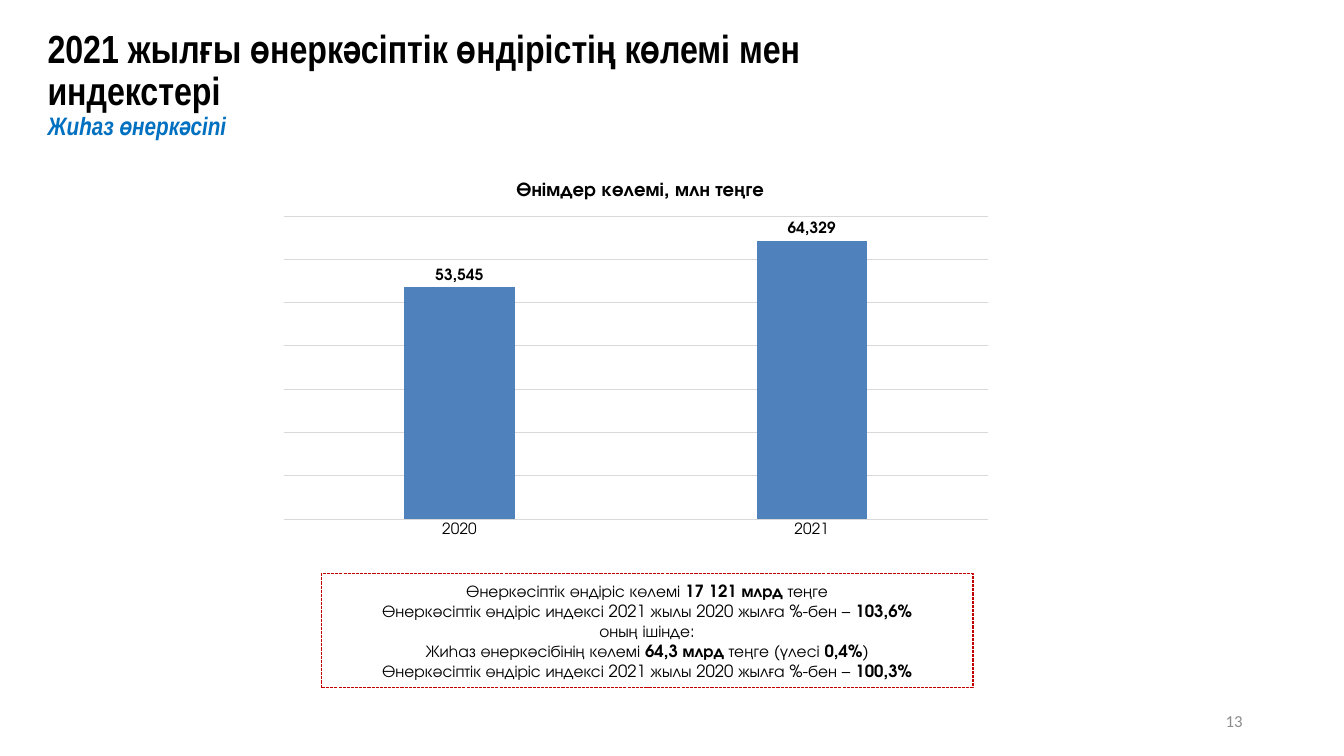
from lxml import etree
from pptx import Presentation, util as u
from pptx.chart.data import CategoryChartData
from pptx.dml.color import RGBColor
from pptx.enum import chart as ch, dml, shapes, text
from pptx.oxml.ns import qn

W, H = 13.33, 7.5
SANS, NARROW, NUMBER = "TeX Gyre Adventor", "Arial Narrow", "Calibri"
BLACK, BLUE, RED, BAR, GRID, GREY = "000000", "0070C0", "C00000", "4F81BD", "D9D9D9", "8C8C8C"

TITLE = "2021 жылғы өнеркәсіптік өндірістің көлемі мен индекстері"
SUBTITLE = "Жиһаз өнеркәсіпі"
CHART_TITLE = "Өнімдер көлемі, млн теңге"
VOLUMES = {"2020": 53545, "2021": 64329}
PAGE = "13"
# Odd pieces between bars are bold
INDEX_LINE = "Өнеркәсіптік өндіріс индексі 2021 жылы 2020 жылға %-бен – "
SUMMARY = [
    "Өнеркәсіптік өндіріс көлемі |17 121 млрд |теңге",
    INDEX_LINE + "|103,6%",
    "оның ішінде:",
    "Жиһаз өнеркәсібінің көлемі |64,3 млрд |теңге (үлесі |0,4%|)",
    INDEX_LINE + "|100,3%",
]

# Left, top, width, height as shares of the slide
PLACES = {
    "title": (0.028, 0.047, 0.636, 0.132),
    "chart_title": (0.294, 0.227, 0.365, 0.045),
    "chart": (0.2, 0.277, 0.546, 0.443),
    "summary": (0.239, 0.759, 0.485, 0.151),
    "page": (0.707, 0.927, 0.225, 0.053),
}
PLOT = {"x": 0.02, "y": 0.02, "w": 0.96, "h": 0.905}


def rgb(value):
    return RGBColor.from_string(value)


def place(name):
    x, y, w, h = PLACES[name]
    return [u.Inches(v) for v in (x * W, y * H, w * W, h * H)]


def style(font, name, size, color=BLACK, **flags):
    for key, value in {"name": name, "size": u.Pt(size), **flags}.items():
        setattr(font, key, value)
    font.color.rgb = rgb(color)


def add_run(p, words, *look, **flags):
    r = p.add_run()
    r.text = words
    style(r.font, *look, **flags)


def text_box(s, name, align, anchor=text.MSO_ANCHOR.MIDDLE):
    tf = s.shapes.add_textbox(*place(name)).text_frame
    tf.word_wrap, tf.vertical_anchor = True, anchor
    tf.paragraphs[0].alignment = align
    return tf.paragraphs[0]


def grid_line(line):
    line.color.rgb, line.width = rgb(GRID), u.Pt(0.75)


def fix_plot_area(chart):
    """Pin the inner plot area to the shares in PLOT."""
    area = chart._chartSpace.chart.plotArea
    for old in area.findall(qn("c:layout")):
        area.remove(old)
    layout = etree.Element(qn("c:layout"))
    area.insert(0, layout)
    manual = etree.SubElement(layout, qn("c:manualLayout"))
    settings = {"layoutTarget": "inner", "xMode": "edge", "yMode": "edge", **PLOT}
    for tag, value in settings.items():
        etree.SubElement(manual, qn("c:" + tag)).set("val", str(value))


def add_volume_chart(s):
    data = CategoryChartData(number_format="#,##0")
    data.categories = list(VOLUMES)
    data.add_series("Series 1", list(VOLUMES.values()))
    kind = ch.XL_CHART_TYPE.COLUMN_CLUSTERED
    chart = s.shapes.add_chart(kind, *place("chart"), data).chart
    chart.has_legend = chart.has_title = False
    style(chart.font, SANS, 11)
    fix_plot_area(chart)

    years, values = chart.category_axis, chart.value_axis
    years.major_tick_mark = ch.XL_TICK_MARK.NONE
    style(years.tick_labels.font, SANS, 11)
    grid_line(years.format.line)
    values.minimum_scale, values.maximum_scale, values.major_unit = 0, 70000, 10000
    values.visible, values.has_major_gridlines = False, True
    grid_line(values.major_gridlines.format.line)

    plot = chart.plots[0]
    plot.gap_width, plot.overlap, plot.vary_by_categories = 219, -27, False
    fill = plot.series[0].format.fill
    fill.solid()
    fill.fore_color.rgb = rgb(BAR)
    labels = plot.series[0].data_labels
    labels.show_value, labels.number_format = True, "#,##0"
    labels.number_format_is_linked = False
    labels.position = ch.XL_LABEL_POSITION.OUTSIDE_END
    style(labels.font, SANS, 11, bold=True)


def add_summary(s):
    sp = s.shapes.add_shape(shapes.MSO_SHAPE.RECTANGLE, *place("summary"))
    sp.shadow.inherit = False
    sp.fill.background()
    sp.line.color.rgb, sp.line.width = rgb(RED), u.Pt(0.75)
    sp.line.dash_style = dml.MSO_LINE.SQUARE_DOT
    tf = sp.text_frame
    tf.word_wrap, tf.vertical_anchor = True, text.MSO_ANCHOR.MIDDLE
    for i, line in enumerate(SUMMARY):
        p = tf.add_paragraph() if i else tf.paragraphs[0]
        p.alignment = text.PP_ALIGN.CENTER
        for j, words in enumerate(line.split("|")):
            add_run(p, words, SANS, 12, bold=j % 2 == 1)


def main():
    prs = Presentation()
    prs.slide_width, prs.slide_height = u.Inches(W), u.Inches(H)
    s = prs.slides.add_slide(prs.slide_layouts[6])

    p = text_box(s, "title", text.PP_ALIGN.LEFT)
    p.line_spacing = 0.9
    add_run(p, TITLE, NARROW, 28, bold=True)
    p.add_line_break()
    add_run(p, SUBTITLE, NARROW, 18, BLUE, bold=True, italic=True)

    p = text_box(s, "chart_title", text.PP_ALIGN.CENTER, text.MSO_ANCHOR.TOP)
    add_run(p, CHART_TITLE, SANS, 14, bold=True)
    add_volume_chart(s)
    add_summary(s)
    add_run(text_box(s, "page", text.PP_ALIGN.RIGHT), PAGE, NUMBER, 12, GREY)
    prs.save("out.pptx")


if __name__ == "__main__":
    main()
